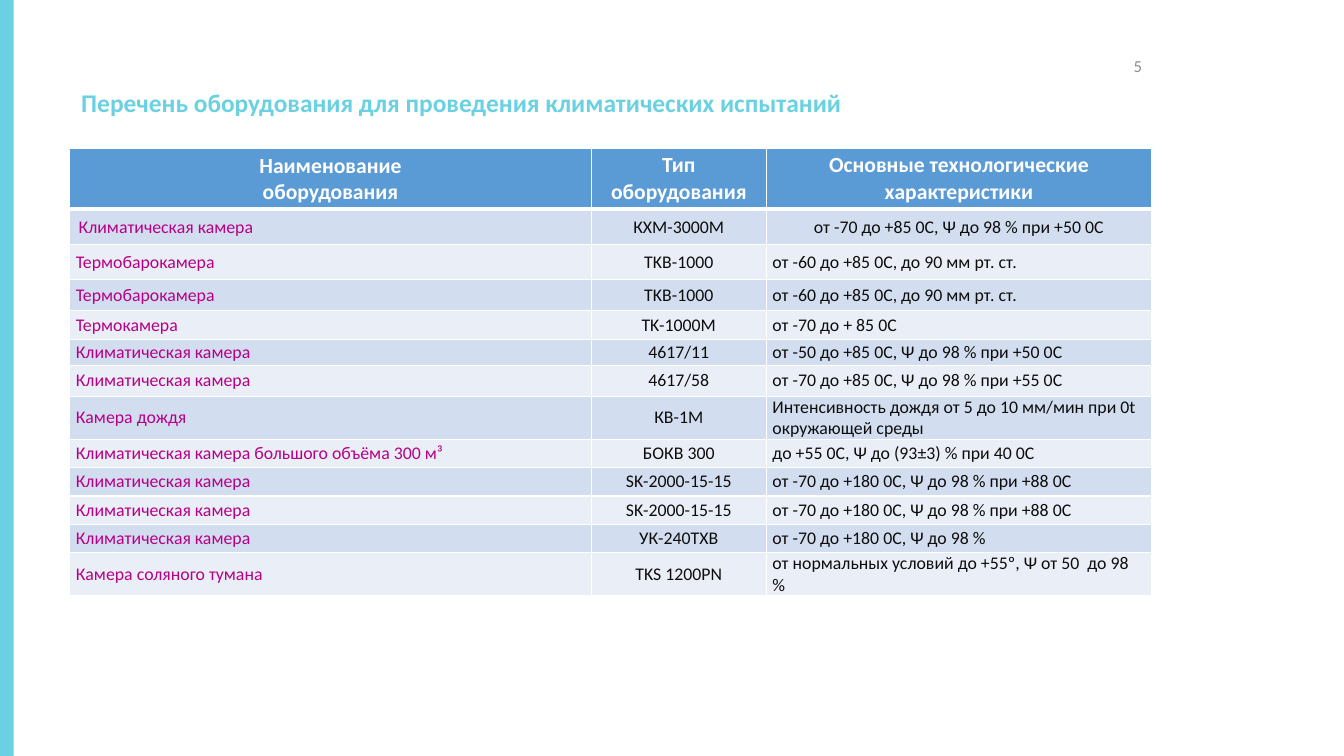
from lxml import etree
from pptx import Presentation
from pptx.dml.color import RGBColor
from pptx.enum.shapes import MSO_SHAPE as Shape
from pptx.enum.text import MSO_ANCHOR as Anchor, PP_ALIGN as Align
from pptx.oxml.ns import qn
from pptx.util import Inches, Pt

# Content
TITLE = "Перечень оборудования для проведения климатических испытаний"
PAGE = "5"
HEADINGS = (
    "Наименование\vоборудования",
    "Тип\vоборудования",
    "Основные технологические характеристики",
)
# row height, name, type, characteristics
EQUIPMENT = [
    (0.39, "Климатическая камера", "КХМ-3000М", "от -70 до +85 0С, Ψ до 98 % при +50 0С"),
    (0.38, "Термобарокамера", "TKB-1000", "от -60 до +85 0С, до 90 мм рт. ст."),
    (0.34, "Термобарокамера", "TKB-1000", "от -60 до +85 0С, до 90 мм рт. ст."),
    (0.32, "Термокамера", "ТK-1000М", "от -70 до + 85 0С"),
    (0.28, "Климатическая камера", "4617/11", "от -50 до +85 0С, Ψ до 98 % при +50 0С"),
    (0.34, "Климатическая камера", "4617/58", "от -70 до +85 0С, Ψ до 98 % при +55 0С"),
    (0.47, "Камера дождя", "КВ-1М", "Интенсивность дождя от 5 до 10 мм/мин при 0t окружающей среды"),
    (0.31, "Климатическая камера большого объёма 300 м³", "БОКВ 300",
     "до +55 0С, Ψ до (93±3) % при 40 0С"),
    (0.31, "Климатическая камера", "SK-2000-15-15", "от -70 до +180 0С, Ψ до 98 % при +88 0С"),
    (0.31, "Климатическая камера", "SK-2000-15-15", "от -70 до +180 0С, Ψ до 98 % при +88 0С"),
    (0.31, "Климатическая камера", "УК-240ТХВ", "от -70 до +180 0С, Ψ до 98 %"),
    (0.47, "Камера соляного тумана", "TKS 1200PN", "от нормальных условий до +55º, Ψ от 50  до 98 %"),
]

# Style
FONT = "Calibri"
CYAN, GREY, WHITE = "6AD1E2", "8C8C8C", "FFFFFF"
HEADER_FILL, BAND_FILLS = "5B9BD5", ("D2DEEF", "EAEFF7")
NAME_COLOR, VALUE_COLOR = "B70088", "0D0D0D"
COLUMN_WIDTHS = (5.71, 1.91, 4.22)
HEADER_HEIGHT = 0.66


def rgb(color):
    return RGBColor.from_string(color)


def write(frame, text, size, color, bold=False, align=Align.LEFT):
    paragraph = frame.paragraphs[0]
    paragraph.text = text
    paragraph.alignment = align
    for run in paragraph.runs:
        run.font.name, run.font.size, run.font.bold = FONT, Pt(size), bold
        run.font.color.rgb = rgb(color)
    return paragraph


def add_text(left, top, width, height, *content, **style):
    box = slide.shapes.add_textbox(*map(Inches, (left, top, width, height)))
    frame = box.text_frame
    frame.word_wrap = True
    frame.vertical_anchor = Anchor.MIDDLE
    return write(frame, *content, **style)


def add_borders(cell, top=1, bottom=1):
    properties = cell._tc.get_or_add_tcPr()
    sides = (("a:lnL", 1), ("a:lnR", 1), ("a:lnT", top), ("a:lnB", bottom))
    for place, (tag, width) in enumerate(sides):
        line = etree.Element(qn(tag), w=str(Pt(width)))
        fill = etree.SubElement(line, qn("a:solidFill"))
        etree.SubElement(fill, qn("a:srgbClr"), val=WHITE)
        properties.insert(place, line)


presentation = Presentation()
presentation.slide_width, presentation.slide_height = Inches(14.7), Inches(8.27)
slide = presentation.slides.add_slide(presentation.slide_layouts[6])

# Side stripe
stripe = slide.shapes.add_shape(Shape.RECTANGLE, 0, 0, Inches(0.15), presentation.slide_height)
stripe.shadow.inherit = False
stripe.fill.solid()
stripe.fill.fore_color.rgb = rgb(CYAN)
stripe.line.fill.background()

# Title and page number
add_text(0.79, 0.85, 10.34, 0.58, TITLE, 20, CYAN, bold=True).line_spacing = 0.9
add_text(10.63, 0.5, 1.96, 0.44, PAGE, 13.2, GREY, align=Align.RIGHT)

# Equipment table
heights = [HEADER_HEIGHT] + [row[0] for row in EQUIPMENT]
table = slide.shapes.add_table(
    len(heights), len(COLUMN_WIDTHS), Inches(0.76), Inches(1.62),
    Inches(sum(COLUMN_WIDTHS)), Inches(sum(heights))).table
for column, width in zip(table.columns, COLUMN_WIDTHS):
    column.width = Inches(width)
for row, height in zip(table.rows, heights):
    row.height = Inches(height)

for r, texts in enumerate([HEADINGS] + [row[1:] for row in EQUIPMENT]):
    for c, text in enumerate(texts):
        cell = table.cell(r, c)
        cell.vertical_anchor = Anchor.MIDDLE
        # The first two cells of the name column keep the default margins
        if c > 0 or r > 1:
            cell.margin_left = cell.margin_right = Inches(0.07)
            cell.margin_top = cell.margin_bottom = 0
        cell.fill.solid()
        cell.fill.fore_color.rgb = rgb(BAND_FILLS[(r - 1) % 2] if r else HEADER_FILL)
        add_borders(cell, top=3 if r == 1 else 1, bottom=1 if r else 3)
        if r == 0:
            write(cell.text_frame, text, 17, WHITE, bold=True, align=Align.CENTER)
        else:
            centred = c == 1 or (r == 1 and c == 2)
            write(cell.text_frame, text, 14, VALUE_COLOR if c else NAME_COLOR,
                  align=Align.CENTER if centred else Align.LEFT)

presentation.save("out.pptx")
